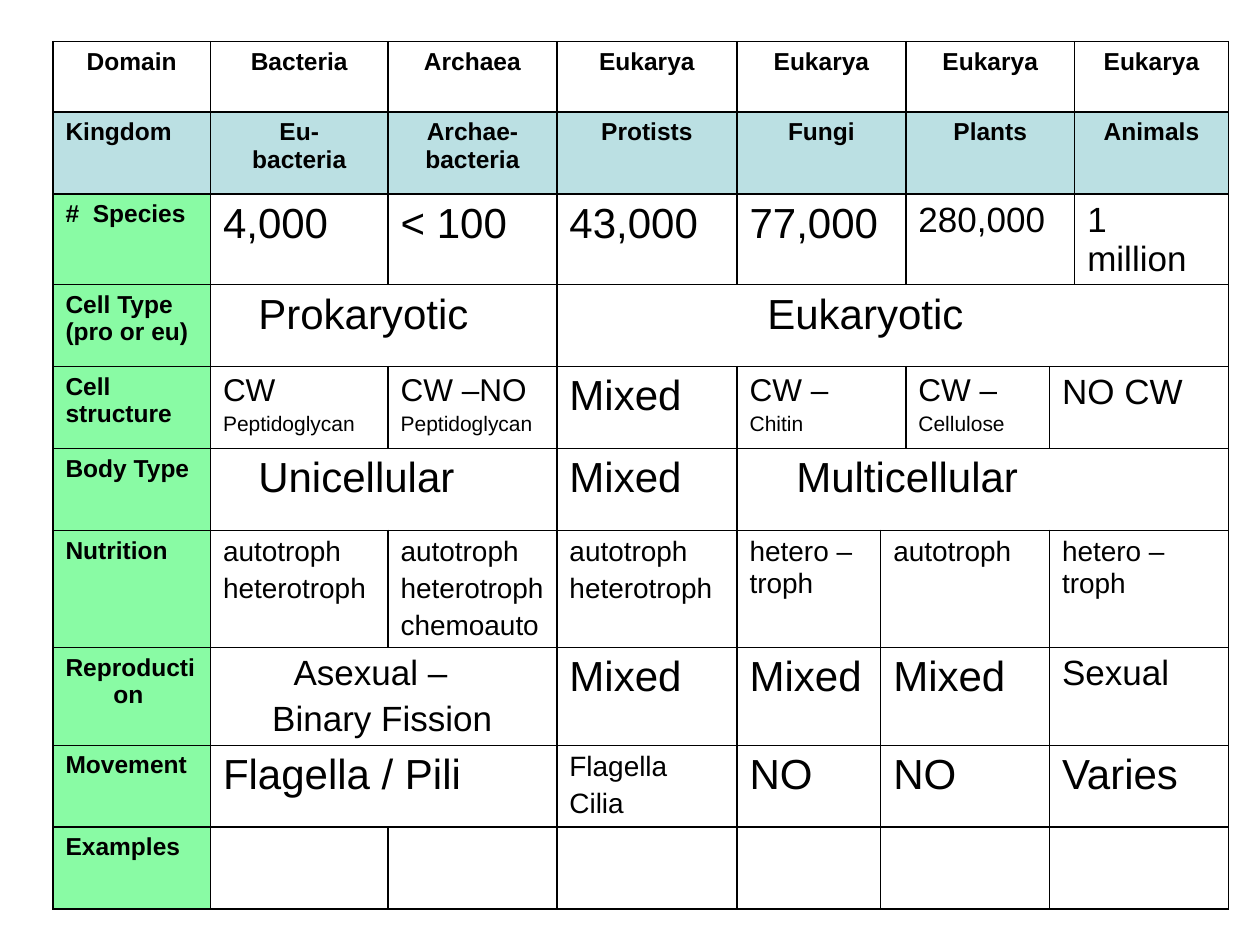
from typing import NamedTuple

from lxml.etree import SubElement
from pptx import Presentation
from pptx.dml.color import RGBColor
from pptx.enum.text import PP_ALIGN as Align
from pptx.oxml.ns import qn
from pptx.util import Inches, Pt

BLACK, BLUE, GREEN = "000000", "BBE0E3", "89FBA4"
COLUMN_WIDTHS = (1.25, 1.41, 1.34, 1.43, 1.14, 0.2, 1.14, 0.2, 1.22)
ROW_HEIGHTS = (0.56, 0.65, 0.65, 0.65, 0.65, 0.65, 0.88, 0.65, 0.65, 0.65)
HANGING = 0.38


class Line(NamedTuple):
    text: str
    size: int = 24
    margin: float = 0


class Entry(NamedTuple):
    lines: tuple[Line, ...] = ()
    span: int = 1


class Heading(NamedTuple):
    lines: tuple[str, ...]
    span: int = 1
    fill: str | None = None
    centered: bool = True


def label(*lines: str) -> Heading:
    return Heading(lines, fill=GREEN, centered=False)


def entry(*texts: str, size: int = 24, span: int = 1, margin: float = 0) -> Entry:
    return Entry(tuple(Line(text, size, margin) for text in texts), span)


def wall(text: str, material: str, span: int = 1) -> Entry:
    return Entry((Line(text, 18), Line(material, 12)), span)


ROWS = (
    (
        Heading(("Domain",)), Heading(("Bacteria",)), Heading(("Archaea",)),
        Heading(("Eukarya",)), Heading(("Eukarya",), 2),
        Heading(("Eukarya",), 2), Heading(("Eukarya",)),
    ),
    (
        Heading(("Kingdom",), 1, BLUE, False),
        Heading(("Eu-", "bacteria"), 1, BLUE),
        Heading(("Archae-", "bacteria"), 1, BLUE),
        Heading(("Protists",), 1, BLUE), Heading(("Fungi",), 2, BLUE),
        Heading(("Plants",), 2, BLUE), Heading(("Animals",), 1, BLUE),
    ),
    (
        label("#  Species"), entry("4,000"), entry("< 100"), entry("43,000"),
        entry("77,000", span=2), entry("280,000", size=20, span=2),
        entry("1 million", size=20),
    ),
    (
        label("Cell Type", "(pro or eu)"),
        entry("Prokaryotic", span=2, margin=0.28),
        entry("Eukaryotic", span=6, margin=1.57),
    ),
    (
        label("Cell", "structure"), wall("CW", "Peptidoglycan"),
        wall("CW –NO", "Peptidoglycan"), entry("Mixed"),
        wall("CW –", "Chitin", 2), wall("CW –", "Cellulose"),
        entry("NO CW", size=20, span=2),
    ),
    (
        label("Body Type"), entry("Unicellular", span=2, margin=0.28),
        entry("Mixed"), entry("Multicellular", span=5, margin=0.37),
    ),
    (
        label("Nutrition"), entry("autotroph", "heterotroph", size=16),
        entry("autotroph", "heterotroph", "chemoauto", size=16),
        entry("autotroph", "heterotroph", size=16),
        entry("hetero –troph", size=16), entry("autotroph", size=16, span=2),
        entry("hetero –troph", size=16, span=2),
    ),
    (
        label("Reproduction"),
        Entry((Line("Asexual –", 20, 0.56), Line("Binary Fission", 20, 0.39)), 2),
        entry("Mixed"), entry("Mixed"), entry("Mixed", span=2),
        entry("Sexual", size=20, span=2),
    ),
    (
        label("Movement"), entry("Flagella / Pili", span=2),
        entry("Flagella", "Cilia", size=16), entry("NO"),
        entry("NO", span=2), entry("Varies", span=2),
    ),
    (
        label("Examples"), Entry(), Entry(), Entry(), Entry(),
        Entry(span=2), Entry(span=2),
    ),
)


def color(value: str) -> RGBColor:
    return RGBColor.from_string(value)


def draw_borders(cell) -> None:
    properties = cell._tc.get_or_add_tcPr()
    for side in ("a:lnL", "a:lnR", "a:lnT", "a:lnB"):
        border = SubElement(properties, qn(side), w=str(Pt(1)))
        solid = SubElement(border, qn("a:solidFill"))
        SubElement(solid, qn("a:srgbClr"), val=BLACK)


def paint(cell, fill: str | None) -> None:
    if fill:
        cell.fill.solid()
        cell.fill.fore_color.rgb = color(fill)
    else:
        cell.fill.background()


def write_paragraph(paragraph, line: Line, bold: bool, indent: float = 0) -> None:
    paragraph.text = line.text
    font = paragraph.font
    font.name, font.size, font.bold = "Arial", Pt(line.size), bold
    font.color.rgb = color(BLACK)
    properties = paragraph._p.get_or_add_pPr()
    properties.set("marL", str(Inches(line.margin)))
    properties.set("indent", str(Inches(indent)))


def write_cell(cell, content: Entry | Heading) -> None:
    frame = cell.text_frame
    for index, line in enumerate(content.lines):
        paragraph = frame.add_paragraph() if index else frame.paragraphs[0]
        if isinstance(content, Heading):
            write_paragraph(paragraph, Line(line, 14, HANGING), True, -HANGING)
            paragraph.alignment = Align.CENTER if content.centered else Align.LEFT
        else:
            write_paragraph(paragraph, line, False)
            paragraph.space_before = Pt(line.size * 0.2)


def draw_table(page) -> None:
    table = page.shapes.add_table(
        len(ROW_HEIGHTS), len(COLUMN_WIDTHS),
        Inches(0.42), Inches(0.33), Inches(9.33), Inches(7.1),
    ).table
    table.first_row = table.horz_banding = False
    for column, width in zip(table.columns, COLUMN_WIDTHS):
        column.width = Inches(width)
    for row, height in zip(table.rows, ROW_HEIGHTS):
        row.height = Inches(height)
    for row_index, contents in enumerate(ROWS):
        start = 0
        for content in contents:
            end = start + content.span
            first = table.cell(row_index, start)
            if content.span > 1:
                first.merge(table.cell(row_index, end - 1))
            for column_index in range(start, end):
                cell = table.cell(row_index, column_index)
                draw_borders(cell)
                paint(cell, getattr(content, "fill", None))
            write_cell(first, content)
            start = end


def main() -> None:
    deck = Presentation()
    deck.slide_width, deck.slide_height = Inches(10), Inches(7.5)
    page = deck.slides.add_slide(deck.slide_layouts[6])
    draw_table(page)
    deck.save("out.pptx")


if __name__ == "__main__":
    main()
